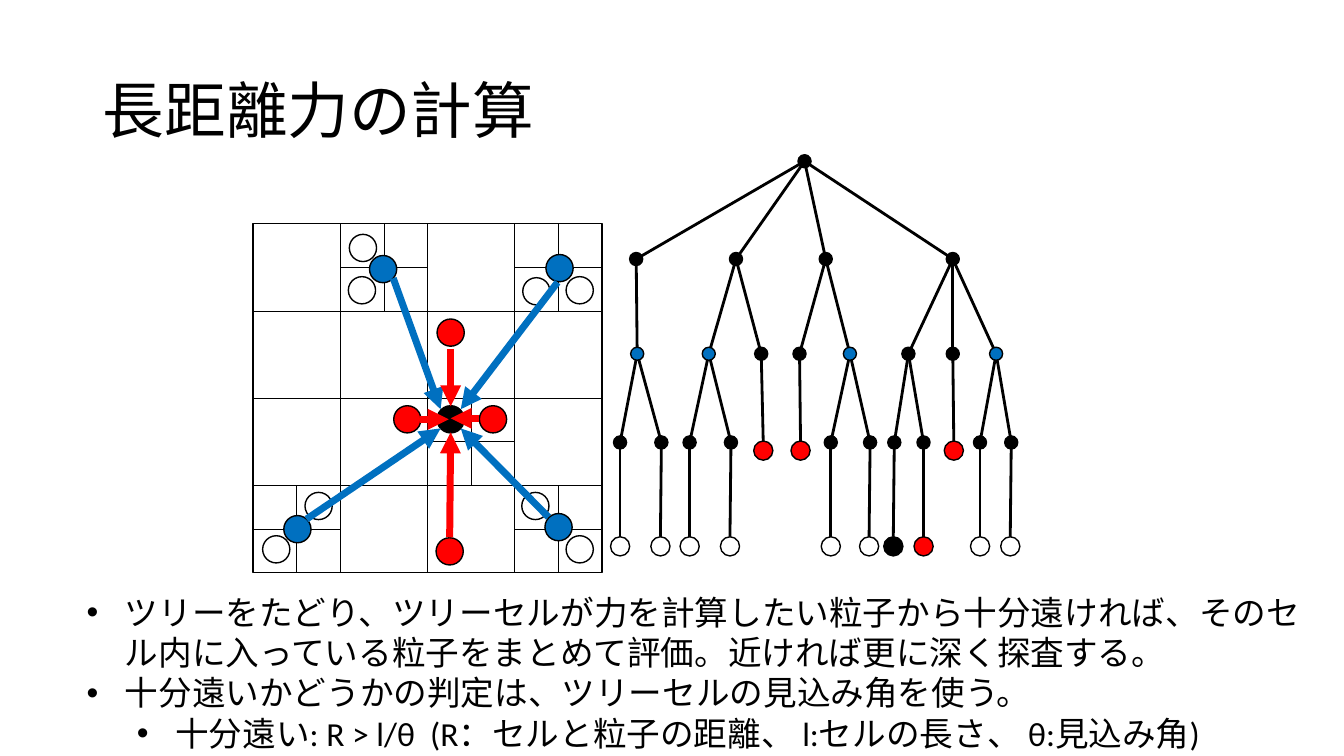
from lxml.etree import SubElement
from pptx import Presentation
from pptx.dml.color import RGBColor
from pptx.enum.shapes import MSO_CONNECTOR, MSO_SHAPE
from pptx.enum.text import MSO_ANCHOR, MSO_AUTO_SIZE, PP_ALIGN
from pptx.oxml.ns import qn
from pptx.util import Inches, Pt

BLACK = RGBColor(0x00, 0x00, 0x00)
WHITE = RGBColor(0xFF, 0xFF, 0xFF)
RED = RGBColor(0xFF, 0x00, 0x00)
BLUE = RGBColor(0x00, 0x70, 0xC0)

TITLE = "長距離力の計算"
BULLETS = [
    (0, "ツリーをたどり、ツリーセルが力を計算したい粒子から十分遠ければ、そのセル内に入っている粒子をまとめて評価。近ければ更に深く探査する。"),
    (0, "十分遠いかどうかの判定は、ツリーセルの見込み角を使う。"),
    (1, "十分遠い: R > l/θ  (R：セルと粒子の距離、 l:セルの長さ、 θ:見込み角)"),
]
BULLET_MARGINS = [0.38, 0.88]
BULLET_HANG = 0.38

TREE = (7.98, BLACK, [
    (6.31, BLACK, [
        (6.32, BLUE, [
            (6.15, BLACK, [(6.15, WHITE, [])]),
            (6.56, BLACK, [(6.55, WHITE, [])])])]),
    (7.30, BLACK, [
        (7.03, BLUE, [
            (6.84, BLACK, [(6.84, WHITE, [])]),
            (7.25, BLACK, [(7.24, WHITE, [])])]),
        (7.55, BLACK, [(7.57, RED, [])])]),
    (8.19, BLACK, [
        (7.93, BLACK, [(7.94, RED, [])]),
        (8.43, BLUE, [
            (8.24, BLACK, [(8.24, WHITE, [])]),
            (8.63, BLACK, [(8.62, WHITE, [])])])]),
    (9.45, BLACK, [
        (9.01, BLACK, [
            (8.87, BLACK, [(8.86, BLACK, [])]),
            (9.16, BLACK, [(9.16, RED, [])])]),
        (9.45, BLACK, [(9.46, RED, [])]),
        (9.88, BLUE, [
            (9.72, BLACK, [(9.72, WHITE, [])]),
            (10.03, BLACK, [(10.02, WHITE, [])])])]),
])
NODE_LEVELS = [1.60, 2.57, 3.51, 4.39]
LEAF_LEVELS = {3: 4.47, 4: 5.42}
NODE_SIZE, LEAF_SIZE, PARTICLE_SIZE = 0.13, 0.19, 0.27

GRID_LEFT, GRID_TOP, GRID_SIZE, GRID_COUNT = 2.51, 2.22, 3.46, 4
SPLIT_CELLS = [(1, 0), (3, 0), (2, 2), (0, 3), (3, 3)]

PARTICLES = [
    (WHITE, [(3.59, 2.88), (5.75, 5.45), (3.16, 5.02), (2.74, 5.45),
             (5.32, 2.89), (5.75, 2.88), (5.31, 5.02), (3.60, 2.46)]),
    (RED, [(4.89, 4.16), (4.46, 5.47), (4.47, 3.30), (4.04, 4.16)]),
    (BLACK, [(4.47, 4.16)]),
    (BLUE, [(5.54, 5.23), (2.95, 5.25), (3.80, 2.67), (5.55, 2.66)]),
]
FORCES = [
    (BLUE, (3.90, 2.76), (4.37, 4.06)),
    (BLUE, (5.53, 2.80), (4.57, 4.06)),
    (BLUE, (3.04, 5.15), (4.37, 4.25)),
    (BLUE, (5.44, 5.13), (4.57, 4.25)),
    (RED, (4.47, 3.46), (4.47, 4.03)),
    (RED, (4.75, 4.15), (4.47, 4.15)),
    (RED, (4.46, 5.33), (4.47, 4.29)),
    (RED, (4.17, 4.16), (4.45, 4.16)),
]


def set_attributes(target, values):
    """Set each named attribute of the target."""
    for name, value in values.items():
        setattr(target, name, value)


def write(paragraph, text, size):
    """Put black text of the given size in a paragraph."""
    run = paragraph.add_run()
    run.text = text
    set_attributes(run.font, {"name": "Calibri", "size": Pt(size)})
    run.font.color.rgb = BLACK


def add_line(slide, start, end, width, color=BLACK, arrow=False):
    """Draw a straight line, with an arrowhead at its end if asked."""
    connector = slide.shapes.add_connector(
        MSO_CONNECTOR.STRAIGHT, *map(Inches, (*start, *end)))
    connector.line.width = Pt(width)
    connector.line.color.rgb = color
    properties = connector._element.spPr
    if arrow:
        SubElement(properties.find(qn("a:ln")), qn("a:tailEnd"), type="triangle")
    SubElement(properties, qn("a:effectLst"))


def add_outlined(slide, kind, left, top, size, color):
    """Draw a square-bounded shape with a thin black outline."""
    shape = slide.shapes.add_shape(kind, *map(Inches, (left, top, size, size)))
    shape.shadow.inherit = False
    shape.fill.solid()
    shape.fill.fore_color.rgb = color
    shape.line.color.rgb = BLACK
    shape.line.width = Pt(1)


def add_circle(slide, center, size, color):
    """Draw a circle around a centre."""
    x, y = center
    add_outlined(slide, MSO_SHAPE.OVAL, x - size / 2, y - size / 2, size, color)


def add_tree(slide, node, level=0):
    """Draw the edges and branches below a node, then the node."""
    x, color, children = node
    y = NODE_LEVELS[level] if children else LEAF_LEVELS[level]
    for child in children:
        below = level + 1
        end_y = NODE_LEVELS[below] if child[2] else LEAF_LEVELS[below] - LEAF_SIZE / 2
        add_line(slide, (x, y), (child[0], end_y), 2)
        add_tree(slide, child, below)
    add_circle(slide, (x, y), NODE_SIZE if children else LEAF_SIZE, color)


def add_cells(slide):
    """Draw the square of cells and the split of the crowded ones."""
    cell = GRID_SIZE / GRID_COUNT
    right, bottom = GRID_LEFT + GRID_SIZE, GRID_TOP + GRID_SIZE
    add_outlined(slide, MSO_SHAPE.RECTANGLE, GRID_LEFT, GRID_TOP, GRID_SIZE, WHITE)
    for index in range(1, GRID_COUNT):
        x, y = GRID_LEFT + index * cell, GRID_TOP + index * cell
        add_line(slide, (GRID_LEFT, y), (right, y), 0.5)
        add_line(slide, (x, GRID_TOP), (x, bottom), 0.5)
    for column, row in SPLIT_CELLS:
        left, top = GRID_LEFT + column * cell, GRID_TOP + row * cell
        x, y = left + cell / 2, top + cell / 2
        add_line(slide, (left, y), (left + cell, y), 0.5)
        add_line(slide, (x, top), (x, top + cell), 0.5)


def add_title(slide):
    """Place and format the title."""
    title = slide.shapes.title
    set_attributes(title, {"left": Inches(0.92), "top": Inches(0.4),
                           "width": Inches(11.5), "height": Inches(1.45)})
    title.text_frame.vertical_anchor = MSO_ANCHOR.MIDDLE
    paragraph = title.text_frame.paragraphs[0]
    set_attributes(paragraph, {"alignment": PP_ALIGN.LEFT, "line_spacing": 0.9})
    write(paragraph, TITLE, 44)


def add_bullets(slide):
    """Write the bulleted explanation."""
    box = slide.shapes.add_textbox(*map(Inches, (0.76, 5.82, 12.29, 1.72)))
    frame = box.text_frame
    set_attributes(frame, {"word_wrap": True, "auto_size": MSO_AUTO_SIZE.SHAPE_TO_FIT_TEXT})
    for index, (level, text) in enumerate(BULLETS):
        paragraph = frame.add_paragraph() if index else frame.paragraphs[0]
        paragraph.level = level
        properties = paragraph._p.get_or_add_pPr()
        properties.set("marL", str(Inches(BULLET_MARGINS[level])))
        properties.set("indent", str(-Inches(BULLET_HANG)))
        SubElement(properties, qn("a:buFont"), typeface="Arial")
        SubElement(properties, qn("a:buChar"), char="•")
        write(paragraph, text, 24)


def main():
    """Build the slide and save it."""
    presentation = Presentation()
    set_attributes(presentation, {"slide_width": Inches(13.33), "slide_height": Inches(7.5)})
    slide = presentation.slides.add_slide(presentation.slide_layouts[5])
    add_title(slide)
    add_tree(slide, TREE)
    add_cells(slide)
    for color, centers in PARTICLES:
        for center in centers:
            add_circle(slide, center, PARTICLE_SIZE, color)
    for color, start, end in FORCES:
        add_line(slide, start, end, 5, color, arrow=True)
    add_bullets(slide)
    presentation.save("out.pptx")


if __name__ == "__main__":
    main()
